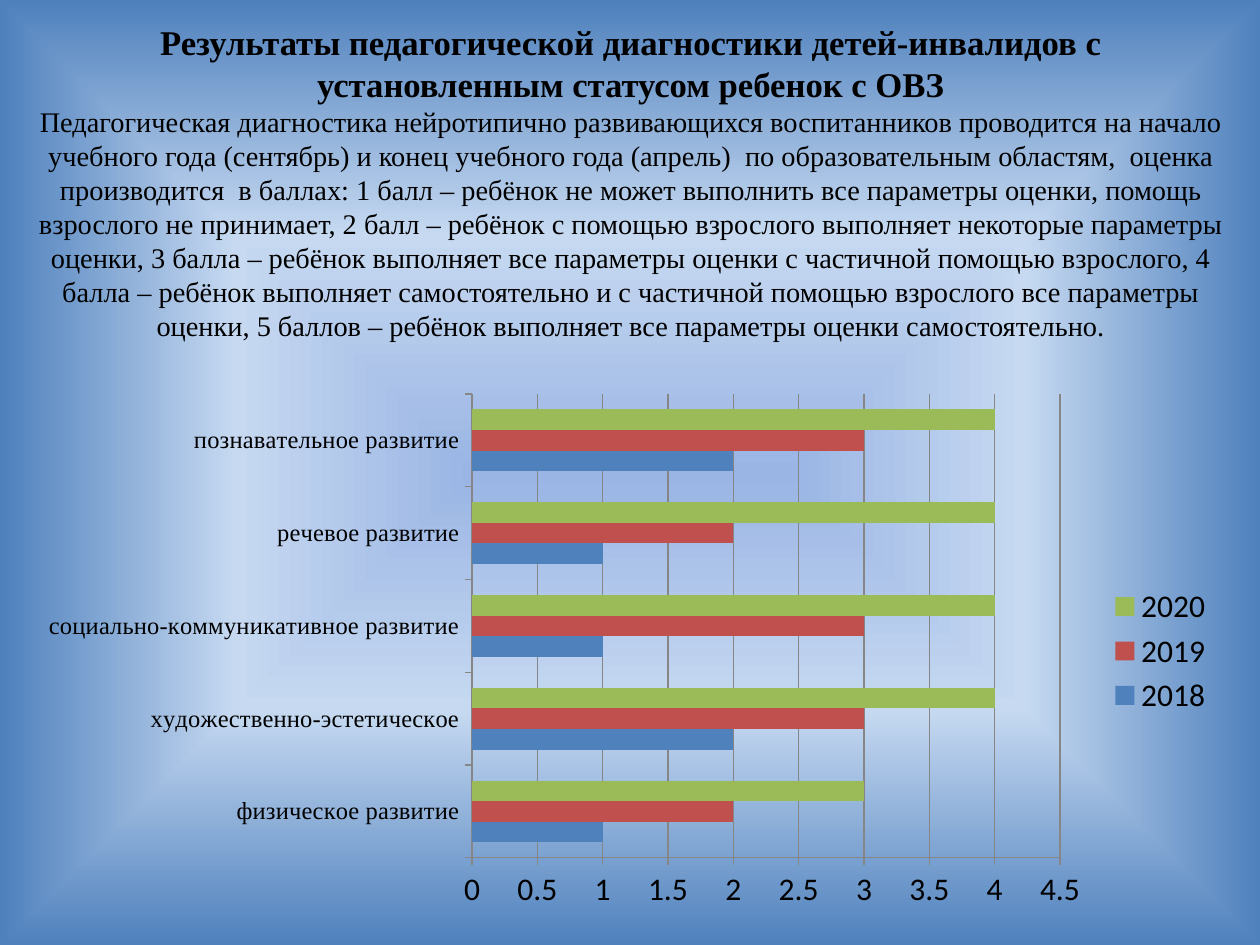
from dataclasses import dataclass

from lxml import etree
from pptx import Presentation
from pptx.chart.data import CategoryChartData
from pptx.dml.color import RGBColor
from pptx.enum.chart import XL_CHART_TYPE as ChartType
from pptx.enum.chart import XL_LEGEND_POSITION as LegendPosition
from pptx.enum.chart import XL_TICK_MARK as TickMark
from pptx.enum.text import MSO_ANCHOR as Anchor
from pptx.enum.text import MSO_AUTO_SIZE as AutoSize
from pptx.enum.text import PP_ALIGN as Align
from pptx.oxml import parse_xml
from pptx.oxml.ns import nsdecls, qn
from pptx.util import Emu, Pt


@dataclass(frozen=True)
class Theme:
    text: str = "000000"
    line: str = "868686"
    background: tuple = ((0, "9AB5E4"), (50, "C6D9F1"), (100, "4F81BD"))
    series: tuple = ("4F81BD", "C0504D", "9BBB59")
    serif: str = "Times New Roman"
    sans: str = "Calibri"
    heading_size: float = 19.8
    body_size: float = 16.2
    chart_size: int = 18
    category_size: int = 14


THEME = Theme()
PX_PER_INCH = 126

HEADING = ("Результаты педагогической диагностики детей-инвалидов "
           "с установленным статусом ребенок с ОВЗ")
DESCRIPTION = (
    "Педагогическая диагностика нейротипично развивающихся воспитанников проводится "
    "на начало учебного года (сентябрь) и конец учебного года (апрель)  по "
    "образовательным областям,  оценка производится  в баллах: 1 балл – ребёнок не "
    "может выполнить все параметры оценки, помощь взрослого не принимает, 2 балл – "
    "ребёнок с помощью взрослого выполняет некоторые параметры оценки, 3 балла – "
    "ребёнок выполняет все параметры оценки с частичной помощью взрослого, 4 балла – "
    "ребёнок выполняет самостоятельно и с частичной помощью взрослого все параметры "
    "оценки, 5 баллов – ребёнок выполняет все параметры оценки самостоятельно.")
AREAS = ("физическое развитие", "художественно-эстетическое",
         "социально-коммуникативное развитие", "речевое развитие",
         "познавательное развитие")
SCORES = {"2018": (1, 2, 1, 1, 2), "2019": (2, 3, 3, 2, 3), "2020": (3, 4, 4, 4, 4)}

TITLE_BOX = (25, 16, 1211, 328)
CHART_BOX = (25, 383, 1201, 536)
PLOT_BOX = (472, 394, 588, 464)


def px(value):
    return Emu(round(value * 914400 / PX_PER_INCH))


def style_font(font, name, size, bold=False):
    font.name, font.size, font.bold = name, Pt(size), bold
    font.color.rgb = RGBColor.from_string(THEME.text)


def paint_background(slide):
    """Fill the background with a gradient spreading from the centre."""
    fill = slide.background.fill
    fill.gradient()
    stops = "".join(
        f'<a:gs pos="{position * 1000}"><a:srgbClr val="{color}"/></a:gs>'
        for position, color in THEME.background)
    gradient = parse_xml(
        f'<a:gradFill {nsdecls("a")} rotWithShape="1"><a:gsLst>{stops}</a:gsLst>'
        '<a:path path="shape"><a:fillToRect l="50000" t="50000" r="50000" b="50000"/>'
        '</a:path></a:gradFill>')
    properties = slide.background._cSld.find(qn("p:bg")).find(qn("p:bgPr"))
    properties.replace(properties.find(qn("a:gradFill")), gradient)


def fill_title(title):
    title.left, title.top, title.width, title.height = map(px, TITLE_BOX)
    frame = title.text_frame
    frame.word_wrap, frame.auto_size = True, AutoSize.NONE
    frame.vertical_anchor = Anchor.TOP
    frame.margin_left = frame.margin_right = px(12)
    frame.margin_top = frame.margin_bottom = px(5)
    frame.text = f"{HEADING}\n{DESCRIPTION}"
    styles = ((THEME.heading_size, True), (THEME.body_size, False))
    for paragraph, (size, bold) in zip(frame.paragraphs, styles):
        paragraph.alignment = Align.CENTER
        paragraph.space_before = Pt(0)
        style_font(paragraph.font, THEME.serif, size, bold)


def place_plot(chart):
    """Pin the inner plot area to PLOT_BOX, in fractions of the chart frame."""
    left, top, width, height = CHART_BOX
    x, y, w, h = PLOT_BOX
    settings = {"layoutTarget": "inner", "xMode": "edge", "yMode": "edge",
                "x": round((x - left) / width, 4), "y": round((y - top) / height, 4),
                "w": round(w / width, 4), "h": round(h / height, 4)}
    plot_area = chart._chartSpace.chart.plotArea
    for old in plot_area.findall(qn("c:layout")):
        plot_area.remove(old)
    layout = parse_xml(f'<c:layout {nsdecls("c")}/>')
    manual = etree.SubElement(layout, qn("c:manualLayout"))
    for name, value in settings.items():
        etree.SubElement(manual, qn(f"c:{name}")).set("val", str(value))
    plot_area.insert(0, layout)


def style_axis(axis, font_name, size):
    axis.major_tick_mark, axis.minor_tick_mark = TickMark.OUTSIDE, TickMark.NONE
    axis.format.line.color.rgb = RGBColor.from_string(THEME.line)
    axis.format.line.width = Pt(0.75)
    style_font(axis.tick_labels.font, font_name, size)


def add_score_chart(slide):
    data = CategoryChartData()
    data.categories = AREAS
    for year, scores in SCORES.items():
        data.add_series(year, scores)
    chart = slide.shapes.add_chart(
        ChartType.BAR_CLUSTERED, *map(px, CHART_BOX), data).chart
    chart.has_title = False
    style_font(chart.font, THEME.sans, THEME.chart_size)

    chart.has_legend = True
    chart.legend.position = LegendPosition.RIGHT
    chart.legend.include_in_layout = False
    style_font(chart.legend.font, THEME.sans, THEME.chart_size)

    style_axis(chart.category_axis, THEME.serif, THEME.category_size)
    values = chart.value_axis
    style_axis(values, THEME.sans, THEME.chart_size)
    values.minimum_scale, values.maximum_scale, values.major_unit = 0, 4.5, 0.5
    values.has_major_gridlines = True
    grid_line = values.major_gridlines.format.line
    grid_line.color.rgb = RGBColor.from_string(THEME.line)
    grid_line.width = Pt(0.75)

    plot = chart.plots[0]
    plot.gap_width, plot.overlap, plot.vary_by_categories = 150, 0, False
    for series, color in zip(plot.series, THEME.series):
        series.format.fill.solid()
        series.format.fill.fore_color.rgb = RGBColor.from_string(color)
    place_plot(chart)


def main():
    presentation = Presentation()
    presentation.slide_width, presentation.slide_height = px(1260), px(945)
    slide = presentation.slides.add_slide(presentation.slide_layouts[5])
    paint_background(slide)
    fill_title(slide.shapes.title)
    add_score_chart(slide)
    presentation.save("out.pptx")


if __name__ == "__main__":
    main()
